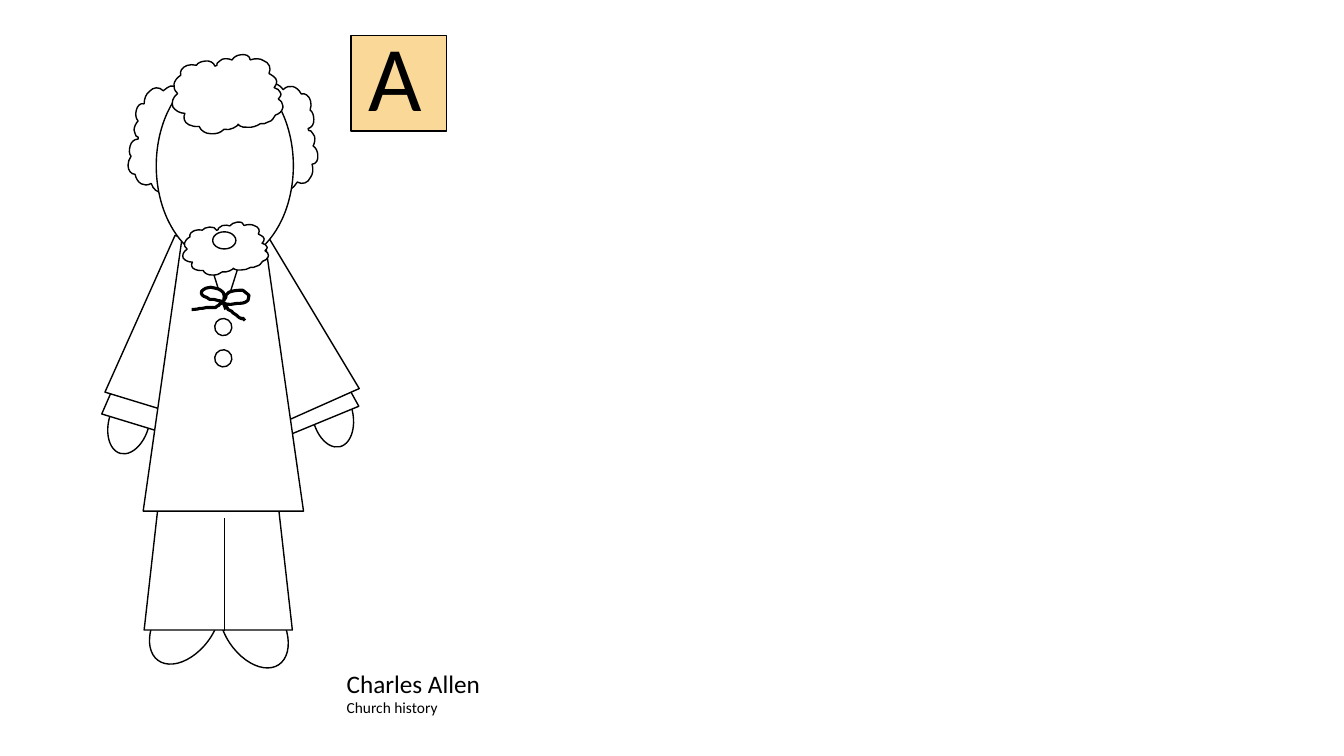
import math
import lxml.etree
import pptx
import pptx.util
import pptx.dml.color
import pptx.enum.shapes
import pptx.enum.text
import pptx.oxml.ns

# Content: every length is counted on a grid of 100 cells per inch
GRID = 100
WIDE, HIGH = 1333, 750
FONT = "Calibri"
COLORS = {"ink": "000000", "paper": "FFFFFF", "badge": "FAD998"}

LABEL = ((334, 658, 240, 59), [("Charles Allen", 18), ("Church history", 11)])
BADGE = (348, 35, 95, 95)
LETTER = ((356, 14, 89, 121), [("A", 66)])

# Outlines: two numbers are a point, six are a Bezier curve
CURLS = [
    (197, 88), (198, 88, 199, 89, 199, 89), (202, 91, 203, 94, 203, 98),
    (206, 102), (207, 103, 207, 105, 207, 107), (208, 110, 207, 113, 206, 115),
    (207, 119, 207, 124, 205, 128), (204, 131, 203, 134, 201, 135), (199, 136),
    (200, 137), (200, 138, 201, 140, 201, 142), (201, 145, 201, 148, 199, 151),
    (201, 155, 201, 159, 199, 164), (197, 170, 192, 173, 188, 173),
    (187, 177, 185, 180, 183, 182), (179, 186, 174, 185, 171, 182),
    (169, 187, 165, 190, 161, 191), (156, 191, 152, 188, 150, 182),
    (143, 186, 136, 182, 134, 173), (130, 173, 127, 169, 127, 164),
    (127, 161, 128, 158, 130, 155), (128, 153, 128, 149, 129, 145),
    (130, 141, 133, 138, 137, 138), (137, 136), (135, 135),
    (134, 134, 134, 131, 133, 129), (133, 126, 135, 122, 137, 120),
    (135, 118, 134, 114, 135, 110), (136, 105, 139, 102, 143, 103),
    (143, 98, 145, 93, 148, 91), (152, 86, 158, 86, 162, 90), (166, 87),
    (170, 84, 174, 85, 177, 90), (180, 87), (181, 86, 182, 86, 183, 86),
    (185, 85, 186, 86, 187, 87), (189, 90), (192, 88, 194, 87, 197, 88),
]
LOOPS = [
    (222, 299), (222, 297, 224, 290, 219, 288), (217, 287, 216, 286, 214, 286),
    (212, 285, 211, 285, 209, 285), (207, 285, 205, 286, 204, 286),
    (202, 287, 201, 288, 200, 289), (199, 292, 201, 294, 205, 295),
    (206, 296, 207, 296, 208, 297), (209, 297, 211, 297, 212, 297),
    (220, 299, 210, 297, 221, 299), (222, 298, 223, 297, 224, 295),
    (224, 294, 224, 291, 227, 290), (229, 289, 234, 288, 237, 288),
    (238, 288, 240, 288, 241, 288), (242, 289, 246, 292, 247, 293),
    (246, 295, 247, 296, 246, 298), (243, 301, 239, 301, 235, 301),
    (233, 301, 231, 302, 229, 302), (227, 302, 225, 302, 222, 301),
    (221, 301, 220, 300, 219, 301), (218, 301, 218, 302, 217, 303),
    (216, 303, 215, 304, 214, 305), (211, 305, 208, 305, 205, 305),
    (202, 306, 200, 306, 198, 306), (196, 307, 190, 307, 190, 307),
]
TAIL = [
    (222, 302), (223, 303, 224, 304, 225, 305), (226, 306, 226, 307, 226, 307),
    (227, 308, 229, 308, 230, 309), (231, 310, 231, 311, 232, 311),
    (233, 312, 234, 312, 235, 313), (236, 314, 236, 315, 237, 315),
    (245, 319, 237, 312, 243, 318),
]
SIDE = (131, 83, 73, 108)
BOW = (190, 285, 57, 22)
END = (222, 302, 21, 16)

# Figure from back to front: kind, box, turn
FIGURE = [
    ("oval", (155, 574, 57, 90), 36.6),  # shoes
    ("oval", (223, 577, 57, 90), 326.3),
    ("oval", (310, 380, 40, 64), 347.4),  # hands
    ("oval", (108, 387, 40, 64), 16),
    ("legs", (143, 424, 147, 201), 0),
    ("cloth", (240, 242, 84, 184), 337.6),  # cuffs and sleeves
    ("cloth", (241, 238, 84, 172), 336),
    ("cloth", (126, 243, 84, 184), 17),
    ("cloth", (127, 236, 84, 169), 17),
    ("cloth", (142, 228, 159, 279), 0),  # coat
    ("collar", (200, 234, 46, 73), 180),
    ("seam", (223, 514, 0, 112), 0),
    ("curls", SIDE, 10),  # side hair
    ("curls", (240, 83, 73, 108), 173.9),
    ("oval", (155, 68, 136, 193), 0),  # head
    ("oval", (213, 316, 17, 17), 36.6),  # buttons
    ("oval", (213, 347, 17, 17), 36.6),
    ("loops", BOW, 0),
    ("tail", END, 0),
    ("curls", (188, 40, 73, 108), 80.2),  # top hair
    ("curls", (199, 205, 48, 84), 80.2),  # beard
    ("oval", (211, 230, 23, 17), 0),  # mouth
]
SHAPE = pptx.enum.shapes.MSO_SHAPE
PRESETS = {"oval": SHAPE.OVAL, "legs": SHAPE.TRAPEZOID, "cloth": SHAPE.TRAPEZOID,
           "collar": SHAPE.ISOSCELES_TRIANGLE, "square": SHAPE.RECTANGLE}
# Outline, its frame, its lean, closed, line width
PATHS = {"curls": (CURLS, SIDE, 10, True, 1), "loops": (LOOPS, BOW, 0, False, 2.25),
         "tail": (TAIL, END, 0, False, 2.25)}


def cells(box):
    return [pptx.util.Inches(n / GRID) for n in box]


def color(name):
    return pptx.dml.color.RGBColor.from_string(COLORS[name])


def add(parent, tag, **attrs):
    return lxml.etree.SubElement(parent, pptx.oxml.ns.qn(tag),
                                 {key: str(val) for key, val in attrs.items()})


def bend(shape, outline, frame, lean, closed):
    """Set true curves, turned upright inside their frame."""
    x, y, w, h = frame
    c, s = math.cos(math.radians(lean)), math.sin(math.radians(lean))
    route = next(shape.element.iter(pptx.oxml.ns.qn("a:path")))
    for child in list(route):
        route.remove(child)
    route.set("w", str(cells(frame)[2]))
    route.set("h", str(cells(frame)[3]))
    for n, part in enumerate(outline):
        tag = "a:cubicBezTo" if len(part) == 6 else "a:lnTo" if n else "a:moveTo"
        step = add(route, tag)
        for px, py in zip(part[::2], part[1::2]):
            dx, dy = px - x - w / 2, py - y - h / 2
            left, top = cells((w / 2 + dx * c + dy * s, h / 2 + dy * c - dx * s))
            add(step, "a:pt", x=left, y=top)
    if closed:
        add(route, "a:close")


def paint(shape, fill, width):
    shape.shadow.inherit = False
    shape.fill.solid()
    shape.fill.fore_color.rgb = color(fill)
    shape.line.color.rgb = color("ink")
    shape.line.width = pptx.util.Pt(width)


def draw(group, kind, box, turn, fill="paper"):
    x, y, w, h = cells(box)
    if kind == "seam":
        line = group.shapes.add_connector(
            pptx.enum.shapes.MSO_CONNECTOR.STRAIGHT, x, y, x + w, y + h)
        line.line.color.rgb = color("ink")
        line.line.width = pptx.util.Pt(0.5)
        add(line.element.spPr, "a:effectLst")
        return
    width = 1
    if kind in PATHS:
        *curve, width = PATHS[kind]
        pen = group.shapes.build_freeform(x, y)
        pen.add_line_segments([(x + w, y + h)], close=False)
        shape = pen.convert_to_shape()
        shape.left, shape.top, shape.width, shape.height = x, y, w, h
        bend(shape, *curve)
    else:
        shape = group.shapes.add_shape(PRESETS[kind], x, y, w, h)
        if kind == "legs":
            shape.adjustments[0] = 0.154
    shape.rotation = turn
    paint(shape, fill, width)


def write(shapes, box, lines):
    frame = shapes.add_textbox(*cells(box)).text_frame
    frame.word_wrap = True
    frame.auto_size = pptx.enum.text.MSO_AUTO_SIZE.SHAPE_TO_FIT_TEXT
    frame.text = "\n".join(words for words, size in lines)
    for para, (words, size) in zip(frame.paragraphs, lines):
        font = para.runs[0].font
        font.name, font.size = FONT, pptx.util.Pt(size)
        font.color.rgb = color("ink")


def main():
    deck = pptx.Presentation()
    deck.slide_width, deck.slide_height = cells((WIDE, HIGH))
    slide = deck.slides.add_slide(deck.slide_layouts[6])

    # Name
    write(slide.shapes, *LABEL)

    # Person
    person = slide.shapes.add_group_shape()
    for part in FIGURE:
        draw(person, *part)

    # Letter badge
    badge = slide.shapes.add_group_shape()
    draw(badge, "square", BADGE, 0, "badge")
    write(badge.shapes, *LETTER)

    deck.save("out.pptx")


if __name__ == "__main__":
    main()
